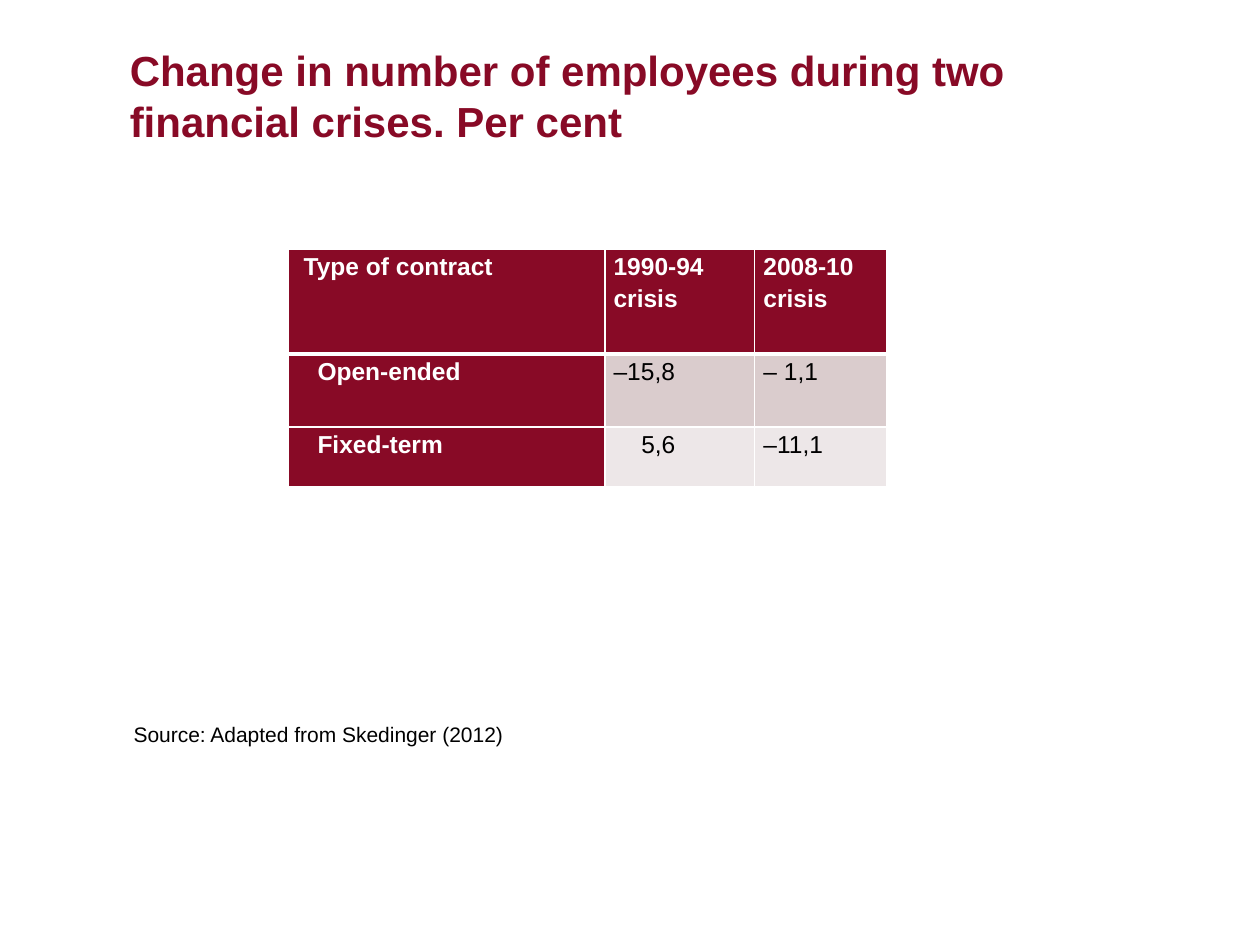
"""Build a slide with a table of employment change in two crises."""
from lxml.etree import SubElement as Sub
from pptx import Presentation as Deck
from pptx.dml.color import RGBColor as Rgb
from pptx.enum.text import MSO_ANCHOR as Anchor
from pptx.oxml.ns import qn
from pptx.util import Inches, Pt

TITLE = "Change in number of employees during two financial crises. Per cent"
SOURCE = "Source: Adapted from Skedinger (2012)"
ROWS = [
    ["Type of contract", "1990-94\ncrisis", "2008-10 crisis"],
    ["Open-ended", "–15,8", "– 1,1"],
    ["Fixed-term", "5,6", "–11,1"],
]
PADS = [[0.12, 0.07, 0.07], [0.23, 0.07, 0.07], [0.23, 0.29, 0.07]]

THEME = {
    "face": "Arial", "wine": "880A26", "white": "FFFFFF", "black": "000000",
    "bands": ["DACCCD", "EDE7E8"], "title": 24, "cell": 14, "note": 12,
}
WIDE, HIGH = 10, 7.5
COLS = [2.51, 1.19, 1.05]
TALLS = [0.83, 0.58, 0.47]
SPOTS = {
    "title": (0.103, 0.039, 0.835, 0.124),
    "table": (0.229, 0.264, sum(COLS) / WIDE, sum(TALLS) / HIGH),
    "note": (0.106, 0.757, 0.835, 0.045),
}


def place(name):
    return [Inches(round(part * side, 2))
            for part, side in zip(SPOTS[name], (WIDE, HIGH) * 2)]


def apply(item, form):
    for key, val in form.items():
        setattr(item, key, val)


def write(frame, text, size, color, bold=False, lead=None):
    frame.text = text
    for para in frame.paragraphs:
        para.line_spacing = lead
        for run in para.runs:
            apply(run.font, {"name": THEME["face"], "size": Pt(size), "bold": bold})
            run.font.color.rgb = Rgb.from_string(color)


def label(slide, name, text, color, bold, anchor):
    frame = slide.shapes.add_textbox(*place(name)).text_frame
    apply(frame, {
        "word_wrap": True, "vertical_anchor": anchor, "margin_left": 0,
        "margin_right": Inches(0.1), "margin_top": Inches(0.05),
        "margin_bottom": Inches(0.05),
    })
    write(frame, text, THEME[name], color, bold)


def edge(cell, sides):
    props = cell._tc.get_or_add_tcPr()
    for side, width in sides.items():
        line = Sub(props, qn("a:ln" + side), w=str(Pt(width)))
        fill = Sub(line, qn("a:solidFill"))
        Sub(fill, qn("a:srgbClr"), val=THEME["white"])


def style(cell, row, col):
    head = row == 0 or col == 0
    apply(cell, {
        "margin_left": Inches(PADS[row][col]), "margin_right": Inches(0.07),
        "margin_top": 0, "margin_bottom": 0, "vertical_anchor": Anchor.TOP,
    })
    edge(cell, {"L": 1, "R": 1, "T": 3 if row == 1 else 1, "B": 1 if row else 3})
    cell.fill.solid()
    tint = THEME["wine"] if head else THEME["bands"][row - 1]
    cell.fill.fore_color.rgb = Rgb.from_string(tint)
    ink = THEME["white"] if head else THEME["black"]
    write(cell.text_frame, ROWS[row][col], THEME["cell"], ink, head, 1.15)


def main():
    deck = Deck()
    apply(deck, {"slide_width": Inches(WIDE), "slide_height": Inches(HIGH)})
    slide = deck.slides.add_slide(deck.slide_layouts[6])
    label(slide, "title", TITLE, THEME["wine"], True, Anchor.MIDDLE)
    label(slide, "note", SOURCE, THEME["black"], False, Anchor.TOP)
    table = slide.shapes.add_table(len(ROWS), len(COLS), *place("table")).table
    for col, width in enumerate(COLS):
        table.columns[col].width = Inches(width)
    for row, tall in enumerate(TALLS):
        table.rows[row].height = Inches(tall)
        for col in range(len(COLS)):
            style(table.cell(row, col), row, col)
    deck.save("out.pptx")


if __name__ == "__main__":
    main()
